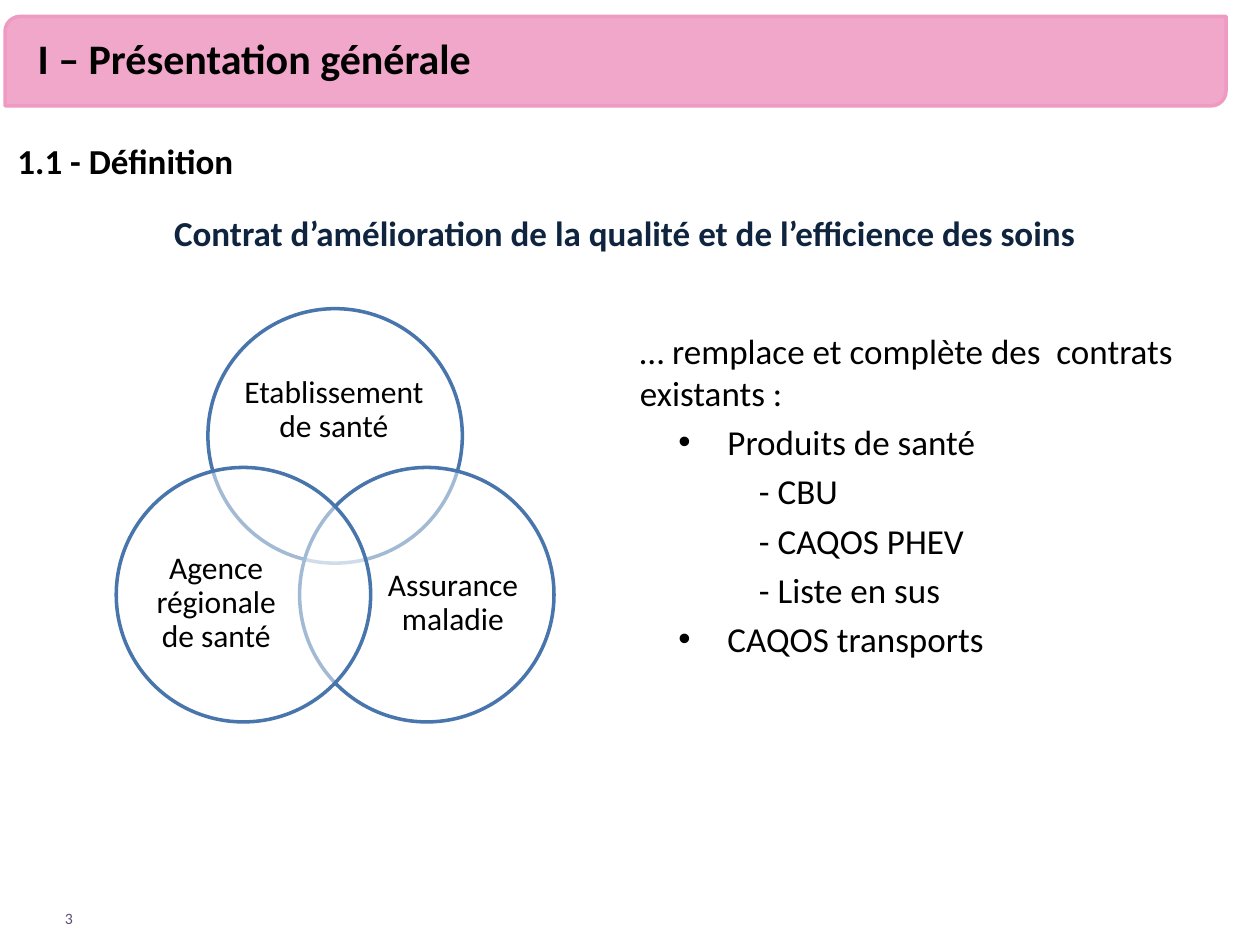
import math
from dataclasses import dataclass

import pptx
import pptx.dml.color
import pptx.enum.shapes
import pptx.enum.text
import pptx.oxml.ns
import pptx.util
from lxml import etree

Pt = pptx.util.Pt
qn = pptx.oxml.ns.qn
SHAPE = pptx.enum.shapes.MSO_SHAPE
ALIGN = pptx.enum.text.PP_ALIGN
ANCHOR = pptx.enum.text.MSO_ANCHOR


def rgb(color):
    return pptx.dml.color.RGBColor.from_string(color)


@dataclass(frozen=True)
class Theme:
    font: str = "Calibri"
    black: str = "000000"
    navy: str = "0F243E"
    purple: str = "604A7B"
    white: str = "FFFFFF"
    pink: str = "F0A7CA"
    pink_line: str = "EE9AC2"
    blue: str = "4875AC"
    title: int = 24
    body: int = 20
    label: int = 18
    small: int = 9
    line: int = 2


class Deck:
    def __init__(self, theme):
        self.theme = theme
        self.prs = pptx.Presentation()
        self.prs.slide_width, self.prs.slide_height = Pt(720), Pt(540)
        self.s = self.prs.slides.add_slide(self.prs.slide_layouts[6])

    def shape(self, kind, box, fill, line, alpha=None, parent=None):
        sp = (parent or self.s).shapes.add_shape(kind, *map(Pt, box))
        sp.shadow.inherit = False
        sp.fill.solid()
        sp.fill.fore_color.rgb = rgb(fill)
        sp.line.color.rgb = rgb(line)
        sp.line.width = Pt(self.theme.line)
        if alpha is not None:
            clr = sp.fill._xPr.find(qn("a:solidFill"))[0]
            etree.SubElement(clr, qn("a:alpha")).set("val", str(alpha * 1000))
        return sp

    def text(self, box, text, size, color=None, bold=False, align=ALIGN.LEFT,
             anchor=ANCHOR.TOP, inset=None, spacing=None, parent=None):
        tf = (parent or self.s).shapes.add_textbox(*map(Pt, box)).text_frame
        tf.word_wrap = True
        tf.vertical_anchor = anchor
        if inset is not None:
            tf.margin_left = tf.margin_right = Pt(inset)
            tf.margin_top = tf.margin_bottom = Pt(inset)
        tf.text = text
        p = tf.paragraphs[0]
        p.alignment = align
        if spacing:
            p.line_spacing = spacing
        self.style(p, size, color, bold)
        return tf

    def style(self, p, size, color=None, bold=False):
        for r in p.runs:
            r.font.name = self.theme.font
            r.font.size = Pt(size)
            r.font.bold = bold
            r.font.color.rgb = rgb(color or self.theme.black)

    def item(self, tf, text, level=0):
        """Add a bulleted item (level 0) or a plain sub-item (level 1)."""
        p = tf.add_paragraph()
        p.text = text
        p.level = level
        pPr = p._p.get_or_add_pPr()
        margin, indent = (68, 0) if level else (50, -28)
        pPr.set("marL", str(Pt(margin)))
        pPr.set("indent", str(Pt(indent)))
        if not level:
            etree.SubElement(pPr, qn("a:buFont")).set("typeface", "Arial")
            etree.SubElement(pPr, qn("a:buChar")).set("char", "•")
        p.space_before = Pt(4)
        self.style(p, self.theme.body)

    def venn(self, center, orbit, diameter, sets):
        """Place circles evenly round a centre, each with its label."""
        group = self.s.shapes.add_group_shape()
        for i, (label, box) in enumerate(sets):
            angle = math.radians(-90 + i * 360 / len(sets))
            left = center[0] + orbit * math.cos(angle) - diameter / 2
            top = center[1] + orbit * math.sin(angle) - diameter / 2
            self.shape(SHAPE.OVAL, (left, top, diameter, diameter),
                       self.theme.white, self.theme.blue, 50, group)
            self.text(box, label, self.theme.label, align=ALIGN.CENTER,
                      anchor=ANCHOR.MIDDLE, inset=0, spacing=0.9, parent=group)


def main():
    t = Theme()
    deck = Deck(t)

    # Slide number
    deck.text((30, 516, 40, 18), "3", t.small, t.purple)

    # Title banner
    deck.shape(SHAPE.ROUND_2_DIAG_RECTANGLE, (2.9, 9.4, 697.7, 51.1),
               t.pink, t.pink_line)
    deck.text((14.4, 15.1, 686, 36), "I – Présentation générale", t.title,
              bold=True)

    # Headings
    deck.text((2.9, 76.3, 697.7, 31.7), "1.1 - Définition", t.body, bold=True,
              align=ALIGN.JUSTIFY)
    deck.text((33, 92.2, 648, 81.4),
              "Contrat d’amélioration de la qualité et de l’efficience des soins",
              t.body, t.navy, True, ALIGN.CENTER, ANCHOR.MIDDLE)

    # Parties to the contract
    deck.venn((191.5, 309.6), 60.5, 145.4, [
        ("Etablissement de santé", (137.5, 201.6, 106.6, 65.5)),
        ("Assurance maladie", (215.3, 304.6, 87.1, 80)),
        ("Agence régionale de santé", (80, 304.6, 87.1, 80)),
    ])

    # Contracts replaced
    tf = deck.text((358.6, 185, 322.6, 275),
                   "… remplace et complète des  contrats existants :", t.body)
    for text, level in [("Produits de santé", 0), ("- CBU", 1),
                        ("- CAQOS PHEV", 1), ("- Liste en sus", 1),
                        ("CAQOS transports", 0)]:
        deck.item(tf, text, level)

    deck.prs.save("out.pptx")


if __name__ == "__main__":
    main()
